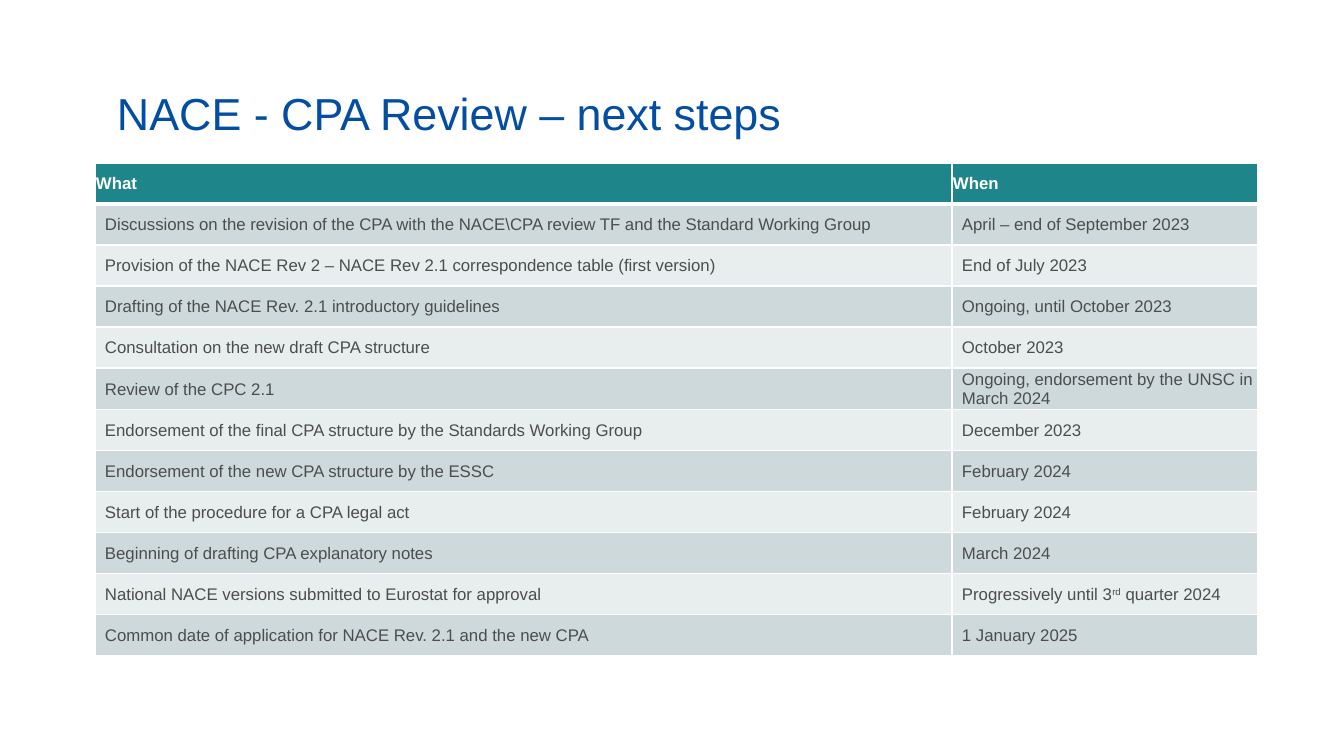
from lxml import etree
from pptx import Presentation
from pptx import util as u
from pptx.dml.color import RGBColor
from pptx.enum import text
from pptx.oxml import ns

STEPS = [
    ("Discussions on the revision of the CPA with the NACE\\CPA review TF and the Standard Working Group",
     "April – end of September 2023"),
    ("Provision of the NACE Rev 2 – NACE Rev 2.1 correspondence table (first version)", "End of July 2023"),
    ("Drafting of the NACE Rev. 2.1 introductory guidelines", "Ongoing, until October 2023"),
    ("Consultation on the new draft CPA structure", "October 2023"),
    ("Review of the CPC 2.1", "Ongoing, endorsement by the UNSC in March 2024"),
    ("Endorsement of the final CPA structure by the Standards Working Group", "December 2023"),
    ("Endorsement of the new CPA structure by the ESSC", "February 2024"),
    ("Start of the procedure for a CPA legal act", "February 2024"),
    ("Beginning of drafting CPA explanatory notes", "March 2024"),
    ("National NACE versions submitted to Eurostat for approval", "Progressively until 3^rd^ quarter 2024"),
    ("Common date of application for NACE Rev. 2.1 and the new CPA", "1 January 2025"),
]
HEADER, BANDS = "1E858B", ("CDD9DA", "E8EDEE")
TITLE = {"name": "Arial", "size": u.Pt(32), "color": "034EA2"}
HEAD = {"name": "Arial", "size": u.Pt(12), "bold": True, "color": "FFFFFF"}
BODY = {"name": "Arial", "size": u.Pt(12), "bold": False, "color": "4D4D4D"}


def px(n):
    return u.Emu(round(n * 914400 / 100.8))


def rgb(value):
    return RGBColor.from_string(value)


def apply(obj, values):
    for key, value in values.items():
        if key == "color":
            obj.color.rgb = rgb(value)
        else:
            setattr(obj, key, value)


def write(p, content, style):
    for i, part in enumerate(content.split("^")):
        r = p.add_run()
        r.text = part
        apply(r.font, style)
        if i % 2:
            r._r.get_or_add_rPr().set("baseline", "30000")


def border(cell, widths):
    tc_pr = cell._tc.get_or_add_tcPr()
    for side, width in widths.items():
        ln = etree.SubElement(tc_pr, ns.qn(f"a:ln{side}"), w=str(u.Pt(width)))
        fill = etree.SubElement(ln, ns.qn("a:solidFill"))
        etree.SubElement(fill, ns.qn("a:srgbClr"), val="FFFFFF")


def add_title(s, x, y, w, h):
    tf = s.shapes.add_textbox(px(x), px(y), px(w), px(h)).text_frame
    apply(tf, {"word_wrap": True, "vertical_anchor": text.MSO_ANCHOR.BOTTOM,
               "margin_left": px(10), "margin_right": px(10),
               "margin_top": px(5), "margin_bottom": 0})
    p = tf.paragraphs[0]
    p.line_spacing = 0.9
    write(p, "NACE - CPA Review – next steps", TITLE)


def add_schedule(s, x, y, w, h):
    rows = [("What", "When")] + STEPS
    table = s.shapes.add_table(len(rows), 2, px(x), px(y), px(w), px(h)).table
    apply(table, {"first_row": False, "horz_banding": False})
    when_width = 306
    for column, width in zip(table.columns, (w - when_width, when_width)):
        column.width = px(width)
    for i, row in enumerate(rows):
        table.rows[i].height = px(h / len(rows))
        for j, content in enumerate(row):
            cell = table.cell(i, j)
            apply(cell, {"vertical_anchor": text.MSO_ANCHOR.MIDDLE,
                         "margin_left": px(10 if i else 1), "margin_right": px(1),
                         "margin_top": px(1), "margin_bottom": 0})
            border(cell, {"L": 1, "R": 1, "T": 3 if i == 1 else 1, "B": 1 if i else 3})
            cell.fill.solid()
            cell.fill.fore_color.rgb = rgb(BANDS[(i - 1) % 2] if i else HEADER)
            write(cell.text_frame.paragraphs[0], content, BODY if i else HEAD)


def main():
    prs = Presentation()
    apply(prs, {"slide_width": px(1344), "slide_height": px(756)})
    s = prs.slides.add_slide(prs.slide_layouts[6])
    add_title(s, 107, 53, 1159, 87)
    add_schedule(s, 95, 163, 1163, 492)
    prs.save("out.pptx")


if __name__ == "__main__":
    main()
